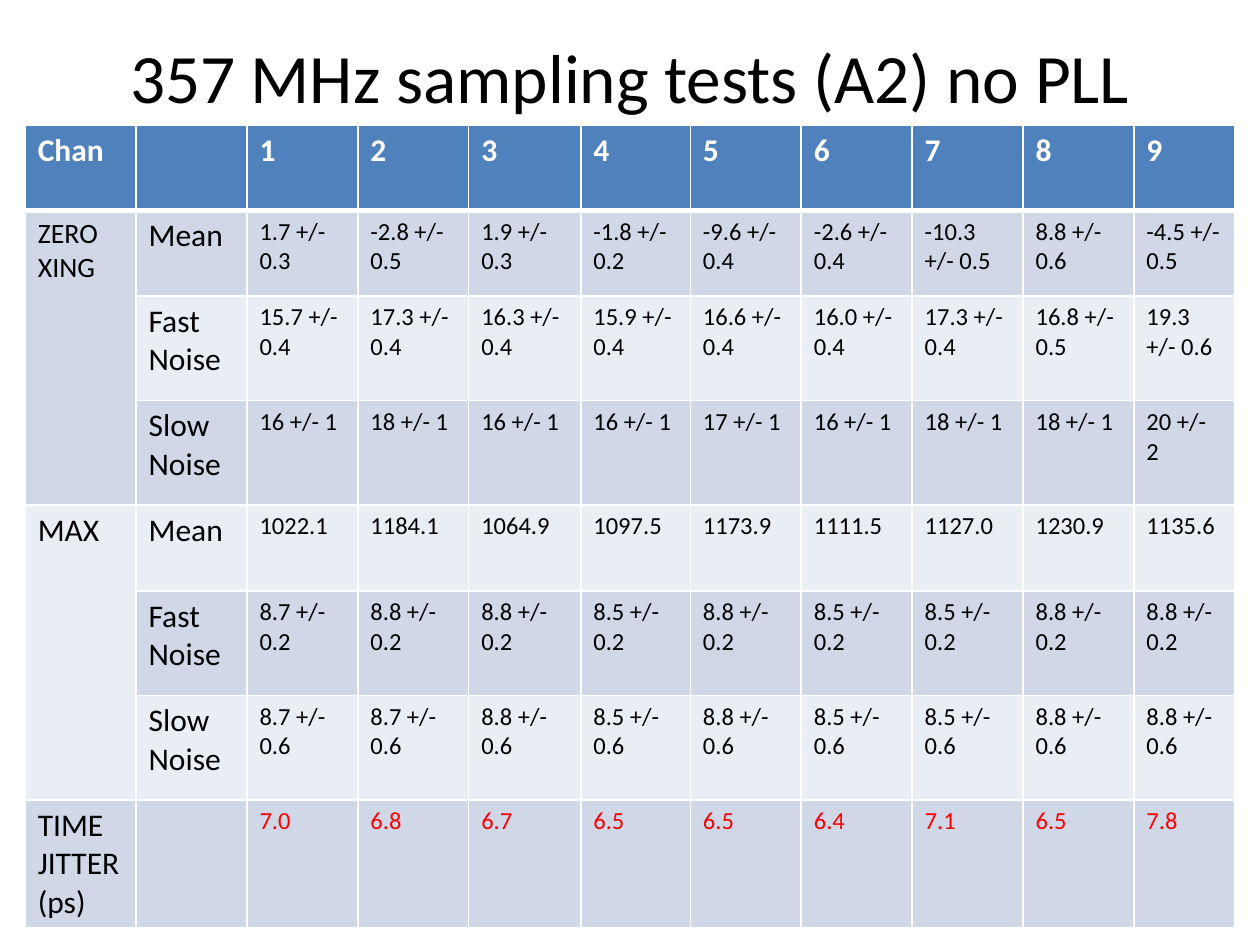
from dataclasses import dataclass

import pptx
import pptx.dml.color
import pptx.enum.text
import pptx.oxml
import pptx.oxml.ns
import pptx.util
from pptx.dml.color import RGBColor
from pptx.util import Inches

FONT = "Calibri"
WHITE = RGBColor(0xFF, 0xFF, 0xFF)
BLACK = RGBColor(0x00, 0x00, 0x00)
RED = RGBColor(0xFF, 0x00, 0x00)
HEADER_BLUE = RGBColor(0x4F, 0x81, 0xBD)
BANDS = (RGBColor(0xD0, 0xD8, 0xE8), RGBColor(0xE9, 0xED, 0xF4))

COLUMN_WIDTHS = (0.88, 0.88, 0.88, 0.88, 0.89, 0.87, 0.88, 0.88, 0.88, 0.88, 0.8)


@dataclass(frozen=True)
class Measurement:
    group: str
    quantity: str
    readings: tuple[str, ...]
    height: float
    group_size: float = 18
    group_rows: int = 1
    color: RGBColor = BLACK


def with_errors(means: str, errors: str) -> tuple[str, ...]:
    return tuple(f"{mean} +/- {error}" for mean, error in zip(means.split(), errors.split()))


def constant_error(means: str, error: str) -> tuple[str, ...]:
    return tuple(f"{mean} +/- {error}" for mean in means.split())


MEASUREMENTS = (
    Measurement(
        "ZERO XING", "Mean",
        with_errors("1.7 -2.8 1.9 -1.8 -9.6 -2.6 -10.3 8.8 -4.5",
                    "0.3 0.5 0.3 0.2 0.4 0.4 0.5 0.6 0.5"),
        0.68, group_size=16, group_rows=3),
    Measurement(
        "", "Fast Noise",
        with_errors("15.7 17.3 16.3 15.9 16.6 16.0 17.3 16.8 19.3",
                    "0.4 0.4 0.4 0.4 0.4 0.4 0.4 0.5 0.6"),
        0.83),
    Measurement(
        "", "Slow\nNoise",
        with_errors("16 18 16 16 17 16 18 18 20", "1 1 1 1 1 1 1 1 2"),
        0.83),
    Measurement(
        "MAX", "Mean",
        tuple("1022.1 1184.1 1064.9 1097.5 1173.9 1111.5 1127.0 1230.9 1135.6".split()),
        0.68, group_rows=3),
    Measurement(
        "", "Fast Noise",
        constant_error("8.7 8.8 8.8 8.5 8.8 8.5 8.5 8.8 8.8", "0.2"), 0.83),
    Measurement(
        "", "Slow\nNoise",
        constant_error("8.7 8.7 8.8 8.5 8.8 8.5 8.5 8.8 8.8", "0.6"), 0.83),
    Measurement(
        "TIME\nJITTER (ps)", "",
        tuple("7.0 6.8 6.7 6.5 6.5 6.4 7.1 6.5 7.8".split()), 0.83, color=RED),
)


def set_borders(cell, top: float = 1, bottom: float = 1) -> None:
    properties = cell._tc.get_or_add_tcPr()
    for side, points in (("L", 1), ("R", 1), ("T", top), ("B", bottom)):
        properties.append(pptx.oxml.parse_xml(
            f'<a:ln{side} {pptx.oxml.ns.nsdecls("a")} w="{pptx.util.Pt(points)}">'
            f'<a:solidFill><a:srgbClr val="{WHITE}"/></a:solidFill></a:ln{side}>'))


def fill_cell(cell, text: str, size: float, color: RGBColor, background: RGBColor,
              bold: bool = False) -> None:
    cell.fill.solid()
    cell.fill.fore_color.rgb = background
    cell.text_frame.text = text
    for paragraph in cell.text_frame.paragraphs:
        paragraph.font.size = pptx.util.Pt(size)
        for run in paragraph.runs:
            run.font.name = FONT
            run.font.size = pptx.util.Pt(size)
            run.font.bold = bold
            run.font.color.rgb = color


def draw_title(slide, text: str) -> None:
    title = slide.shapes.title
    title.left, title.top = Inches(0.5), Inches(0.3)
    title.width, title.height = Inches(9), Inches(0.61)
    frame = title.text_frame
    frame.text = text
    frame.auto_size = pptx.enum.text.MSO_AUTO_SIZE.NONE
    frame.vertical_anchor = pptx.enum.text.MSO_ANCHOR.MIDDLE
    heading = frame.paragraphs[0]
    heading.alignment = pptx.enum.text.PP_ALIGN.CENTER
    font = heading.runs[0].font
    font.name = FONT
    font.size = pptx.util.Pt(39.6)
    font.color.rgb = BLACK


def draw_measurements(slide, measurements: tuple[Measurement, ...]) -> None:
    heights = (0.68, *(measurement.height for measurement in measurements))
    table = slide.shapes.add_table(
        len(heights), len(COLUMN_WIDTHS), Inches(0.2), Inches(0.99),
        Inches(sum(COLUMN_WIDTHS)), Inches(sum(heights))).table
    for column, width in zip(table.columns, COLUMN_WIDTHS):
        column.width = Inches(width)
    for row, height in zip(table.rows, heights):
        row.height = Inches(height)

    channels = ("Chan", "", *(str(number) for number in range(1, 10)))
    for column, label in enumerate(channels):
        cell = table.cell(0, column)
        set_borders(cell, bottom=3)
        fill_cell(cell, label, 18, WHITE, HEADER_BLUE, bold=True)

    for row, measurement in enumerate(measurements, start=1):
        background = BANDS[(row - 1) % 2]
        texts = (measurement.group, measurement.quantity, *measurement.readings)
        sizes = (measurement.group_size, 18, *[14] * len(measurement.readings))
        colors = (BLACK, BLACK, *[measurement.color] * len(measurement.readings))
        for column, (text, size, color) in enumerate(zip(texts, sizes, colors)):
            cell = table.cell(row, column)
            set_borders(cell, top=3 if row == 1 else 1)
            fill_cell(cell, text, size, color, background)
        if measurement.group_rows > 1:
            table.cell(row, 0).merge(table.cell(row + measurement.group_rows - 1, 0))


def main() -> None:
    presentation = pptx.Presentation()
    presentation.slide_width = Inches(10)
    presentation.slide_height = Inches(7.5)
    slide = presentation.slides.add_slide(presentation.slide_layouts[5])
    draw_title(slide, "357 MHz sampling tests (A2) no PLL")
    draw_measurements(slide, MEASUREMENTS)
    presentation.save("out.pptx")


if __name__ == "__main__":
    main()
